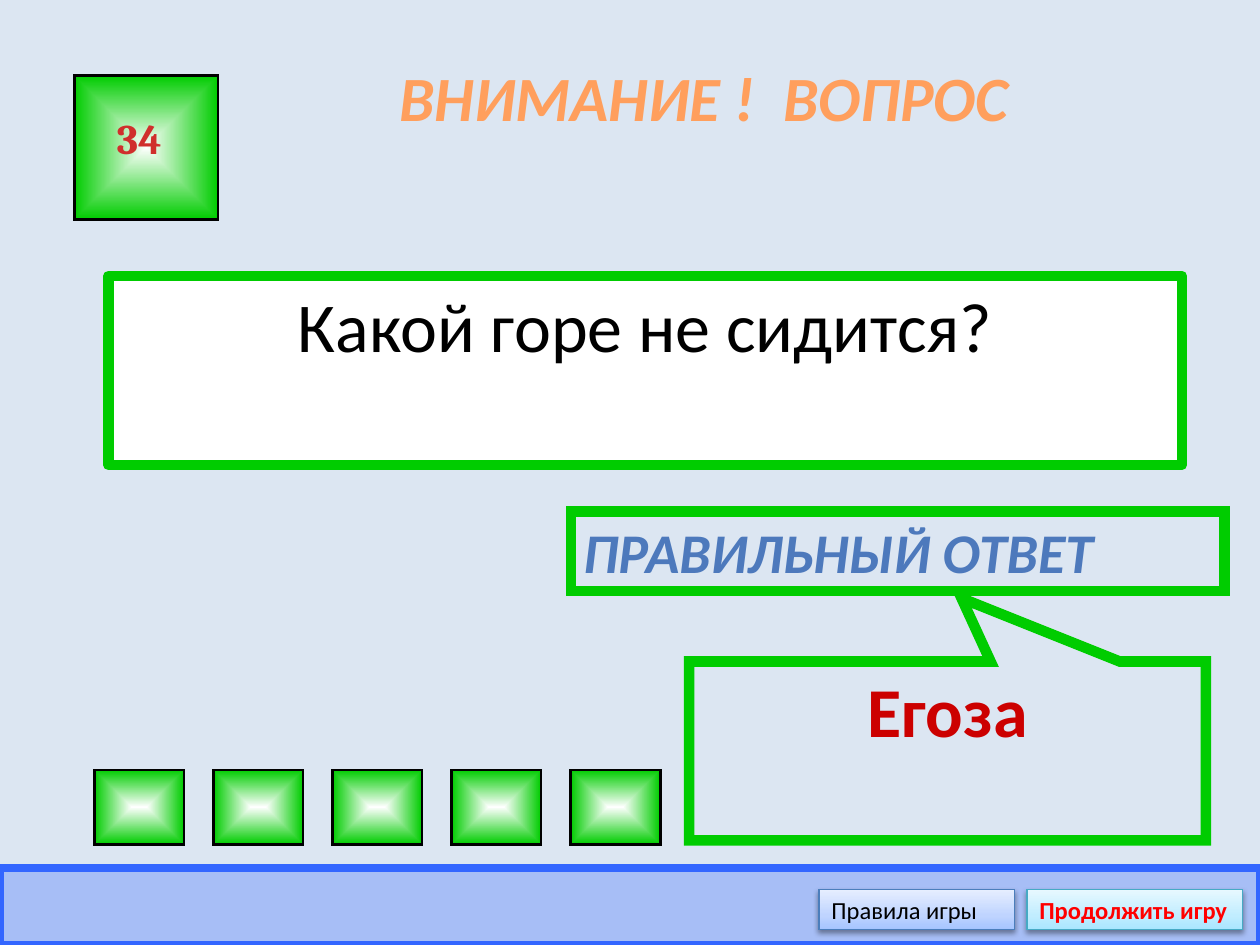
import dataclasses
import typing

import lxml.etree
import pptx
import pptx.dml.color
import pptx.enum.shapes
import pptx.enum.text
import pptx.oxml
import pptx.oxml.ns
import pptx.util

Inches = pptx.util.Inches
Pt = pptx.util.Pt
RGB = pptx.dml.color.RGBColor
Kind = pptx.enum.shapes.MSO_SHAPE
Anchor = pptx.enum.text.MSO_ANCHOR
Align = pptx.enum.text.PP_ALIGN
qn = pptx.oxml.ns.qn

PALE = RGB(0xDC, 0xE6, 0xF2)
GREEN = RGB(0x00, 0xCC, 0x00)
WHITE = RGB(0xFF, 0xFF, 0xFF)
BLACK = RGB(0x00, 0x00, 0x00)
BLUE = RGB(0x33, 0x66, 0xFF)
RED = RGB(0xFF, 0x00, 0x00)
CRIMSON = RGB(0xCC, 0x00, 0x00)
STEEL = RGB(0x4B, 0x7E, 0xBC)
TEAL = RGB(0x46, 0xAA, 0xC5)


@dataclasses.dataclass(frozen=True)
class Blend:
    stops: tuple[tuple[int, RGB], ...]
    angle: int | None = 90


Ink = RGB | Blend

ORANGE = Blend((
    (0, RGB(0xFF, 0xA3, 0x67)), (25, RGB(0xFF, 0x9F, 0x5D)),
    (50, RGB(0xF3, 0x8E, 0x3A)), (75, RGB(0xFF, 0x9F, 0x5D)),
    (100, RGB(0xFF, 0xA3, 0x67)),
))
ROSE = Blend((
    (0, RGB(0xFC, 0x7C, 0x7A)), (75, RGB(0xD0, 0x2F, 0x2C)),
    (100, RGB(0xC7, 0x05, 0x00)),
))
NAVY = Blend((
    (0, RGB(0x74, 0x94, 0xC9)), (49, RGB(0x4D, 0x79, 0xBC)),
    (50, RGB(0x34, 0x6A, 0xAA)), (92, RGB(0x32, 0x5F, 0x94)),
    (100, RGB(0x31, 0x5D, 0x91)),
))
GLOW = Blend(((0, WHITE), (100, GREEN)), None)
SKY = Blend((
    (0, RGB(0xA4, 0xC4, 0xFF)), (35, RGB(0xBF, 0xD4, 0xFF)),
    (100, RGB(0xE6, 0xEE, 0xFF)),
), 270)
AQUA = Blend((
    (0, RGB(0xA7, 0xE6, 0xFF)), (35, RGB(0xC1, 0xED, 0xFF)),
    (100, RGB(0xE7, 0xF8, 0xFF)),
), 270)


@dataclasses.dataclass(frozen=True)
class Box:
    left: float
    top: float
    width: float
    height: float

    def size(self) -> list[int]:
        return [Inches(n) for n in dataclasses.astuple(self)]


@dataclasses.dataclass(frozen=True)
class Button:
    label: str
    box: Box
    fill: Blend
    line: RGB
    ink: RGB
    bold: bool


def add(host: typing.Any, tag: str, **attrs: typing.Any) -> typing.Any:
    return lxml.etree.SubElement(
        host, qn(tag), {key: str(val) for key, val in attrs.items()})


def paint(fill: typing.Any, host: typing.Any, ink: Ink) -> None:
    fill.solid()
    if isinstance(ink, RGB):
        fill.fore_color.rgb = ink
        return
    grad = pptx.oxml.parse_xml(
        f'<a:gradFill {pptx.oxml.ns.nsdecls("a")} rotWithShape="1"/>')
    stops = add(grad, "a:gsLst")
    for place, shade in ink.stops:
        add(add(stops, "a:gs", pos=place * 1000), "a:srgbClr", val=shade)
    if ink.angle is None:
        core = add(grad, "a:path", path="rect")
        add(core, "a:fillToRect", l=50000, t=50000, r=50000, b=50000)
    else:
        add(grad, "a:lin", ang=ink.angle * 60000, scaled=0)
    host.replace(host.find(qn("a:solidFill")), grad)


def text(shape: typing.Any, words: str, *, size: int, ink: Ink,
         font: str = "Calibri", bold: bool = False, slant: bool = False,
         align: Align = Align.LEFT, anchor: Anchor = Anchor.MIDDLE,
         wrap: bool = False) -> None:
    frame = shape.text_frame
    frame.word_wrap = wrap
    frame.auto_size = pptx.enum.text.MSO_AUTO_SIZE.NONE
    frame.vertical_anchor = anchor
    para = frame.paragraphs[0]
    para.alignment = align
    run = para.add_run()
    run.text = words
    style = run.font
    style.name, style.size = font, Pt(size)
    style.bold, style.italic = bold, slant
    paint(style.fill, run._r.get_or_add_rPr(), ink)


def place(shape: typing.Any, box: Box) -> None:
    shape.left, shape.top, shape.width, shape.height = box.size()


def frame(shape: typing.Any, fill: Ink, line: RGB, width: float) -> None:
    paint(shape.fill, shape._element.spPr, fill)
    shape.line.color.rgb = line
    shape.line.width = Pt(width)


def draw(slide: typing.Any, box: Box, fill: Ink, line: RGB, width: float,
         kind: Kind = Kind.RECTANGLE) -> typing.Any:
    shape = slide.shapes.add_shape(kind, *box.size())
    shape.shadow.inherit = False
    frame(shape, fill, line, width)
    add(shape.line._get_or_add_ln(), "a:miter", lim=800000)
    return shape


def press(slide: typing.Any, item: Button) -> None:
    shape = draw(slide, item.box, item.fill, item.line, 0.75)
    glow = add(shape._element.spPr.find(qn("a:effectLst")), "a:outerShdw",
               blurRad=Pt(3.1), dist=Pt(1.6), dir=5400000, rotWithShape=0)
    add(add(glow, "a:srgbClr", val=BLACK), "a:alpha", val=38000)
    text(shape, item.label, size=14, ink=item.ink, bold=item.bold)


def main() -> None:
    deck = pptx.Presentation()
    deck.slide_width, deck.slide_height = Inches(10), Inches(7.5)
    slide = deck.slides.add_slide(deck.slide_layouts[1])
    paint(slide.background.fill, None, PALE)

    title, body = slide.placeholders
    place(title, Box(2.4, 0.3, 6.38, 0.93))
    text(title, "ВНИМАНИЕ !  ВОПРОС", size=36, ink=ORANGE, bold=True,
         slant=True, align=Align.CENTER, wrap=True)

    place(body, Box(0.86, 2.19, 8.52, 1.5))
    frame(body, WHITE, GREEN, 6)
    text(body, "Какой горе не сидится?", size=40, ink=BLACK,
         align=Align.CENTER, anchor=Anchor.TOP, wrap=True)
    add(body.text_frame.paragraphs[0]._p.get_or_add_pPr(), "a:buNone")

    tiles = [Box(0.59, 0.6, 1.14, 1.14)]
    tiles += [Box(0.75 + 0.945 * step, 6.11, 0.71, 0.59) for step in range(5)]
    for tile in tiles:
        draw(slide, tile, GLOW, BLACK, 1.5, Kind.ACTION_BUTTON_CUSTOM)

    count = slide.shapes.add_textbox(*Box(0.83, 0.84, 0.63, 0.63).size())
    text(count, "34", size=24, ink=ROSE, font="Cambria", bold=True,
         anchor=Anchor.TOP)

    head = draw(slide, Box(4.53, 4.06, 5.19, 0.63), PALE, GREEN, 6)
    text(head, "ПРАВИЛЬНЫЙ ОТВЕТ", size=32, ink=NAVY, bold=True, slant=True)

    reply = draw(slide, Box(5.47, 5.25, 4.1, 1.42), PALE, GREEN, 6,
                 Kind.RECTANGULAR_CALLOUT)
    reply.rotation = 180
    reply.adjustments[0], reply.adjustments[1] = -0.027, 0.854
    text(reply, "Егоза", size=40, ink=CRIMSON, bold=True,
         align=Align.CENTER, anchor=Anchor.TOP, wrap=True)
    reply.text_frame._txBody.bodyPr.set("rot", "10800000")

    bar = draw(slide, Box(0, 6.89, 10, 0.61), BLUE, BLUE, 4.5)
    shade = bar._element.spPr.find(qn("a:solidFill")).find(qn("a:srgbClr"))
    add(shade, "a:alpha", val=31000)

    for item in (
        Button("Правила игры", Box(6.5, 7.06, 1.55, 0.32),
               SKY, STEEL, BLACK, False),
        Button("Продолжить игру", Box(8.15, 7.06, 1.71, 0.32),
               AQUA, TEAL, RED, True),
    ):
        press(slide, item)

    deck.save("out.pptx")


if __name__ == "__main__":
    main()
